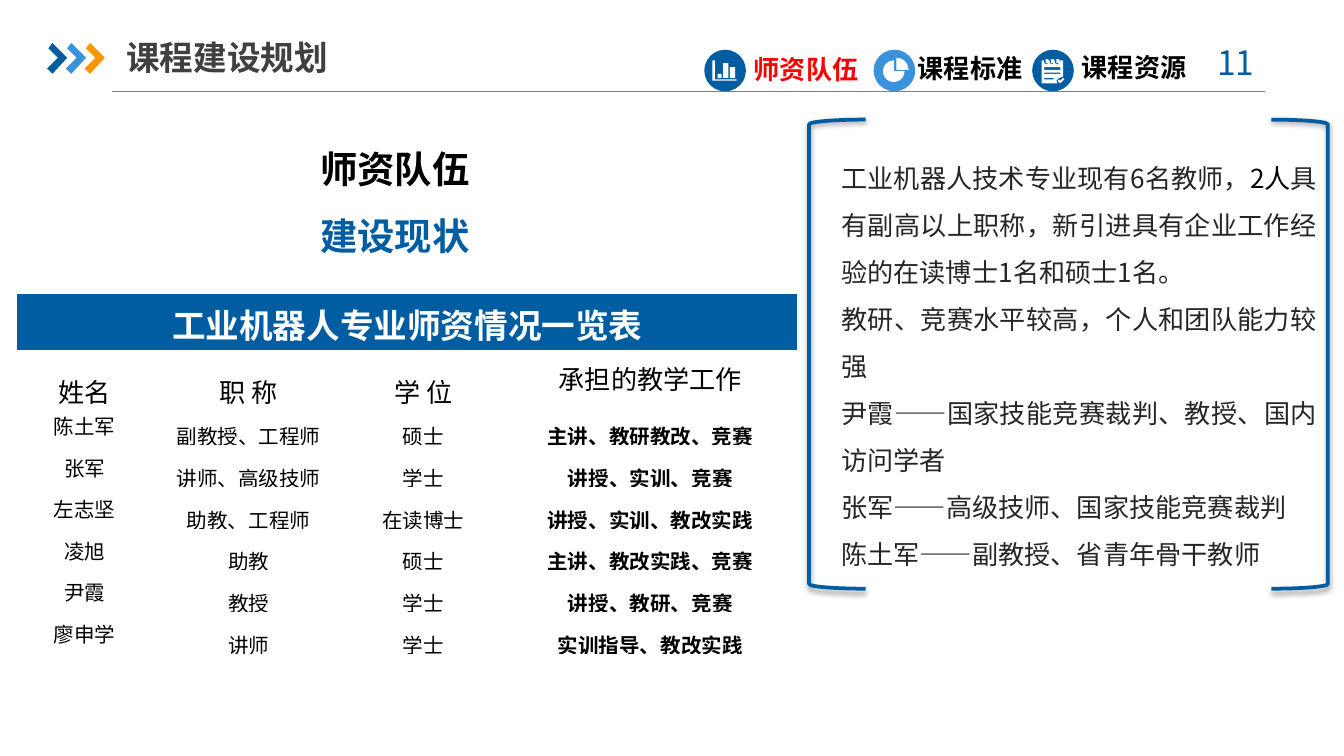
"""Builds the teaching-team slide of a course construction plan."""
from math import cos, radians, sin

from lxml import etree
from pptx import Presentation
from pptx.dml.color import RGBColor
from pptx.enum.shapes import MSO_CONNECTOR, MSO_SHAPE
from pptx.enum.text import MSO_ANCHOR, PP_ALIGN
from pptx.oxml.ns import qn
from pptx.util import Inches, Pt

LEFT, CENTER, JUSTIFY = PP_ALIGN.LEFT, PP_ALIGN.CENTER, PP_ALIGN.JUSTIFY
MIDDLE = MSO_ANCHOR.MIDDLE
STRAIGHT = MSO_CONNECTOR.STRAIGHT
OVAL = MSO_SHAPE.OVAL
LEFT_BRACKET, RIGHT_BRACKET = MSO_SHAPE.LEFT_BRACKET, MSO_SHAPE.RIGHT_BRACKET

BLUE = RGBColor(0x00, 0x5D, 0xA2)
SKY = RGBColor(0x39, 0x92, 0xDB)
ORANGE = RGBColor(0xF7, 0x96, 0x00)
RED = RGBColor(0xFF, 0x00, 0x00)
BLACK = RGBColor(0x00, 0x00, 0x00)
WHITE = RGBColor(0xFF, 0xFF, 0xFF)
GRAY = RGBColor(0x80, 0x80, 0x80)
TITLE_GRAY = RGBColor(0x40, 0x40, 0x40)
INK = RGBColor(0x26, 0x26, 0x26)
SANS = "Noto Sans CJK SC"

TITLE = "课程建设规划"
PAGE_NUMBER = "11 "
HEADINGS = [("师资队伍", BLACK), ("建设现状", BLUE)]
TABS = [
    ("师资队伍", RED, 5.51, 0.35),
    ("课程标准", BLACK, 6.73, 0.34),
    ("课程资源", BLACK, 7.95, 0.33),
]
TABLE_TITLE = "工业机器人专业师资情况一览表"
COLUMN_WIDTHS = [1.02, 1.42, 1.18, 2.2]
ROW_HEIGHTS = [0.43, 0.4] + [0.31] * 7
TEACHERS = [
    ("姓名", "职 称", "学 位", "承担的教学工作"),
    ("陈土军", "副教授、工程师", "硕士", "主讲、教研教改、竞赛"),
    ("张军", "讲师、高级技师", "学士", "讲授、实训、竞赛"),
    ("左志坚", "助教、工程师", "在读博士", "讲授、实训、教改实践"),
    ("凌旭", "助教", "硕士", "主讲、教改实践、竞赛"),
    ("尹霞", "教授", "学士", "讲授、教研、竞赛"),
    ("廖申学", "讲师", "学士", "实训指导、教改实践"),
    ("", "", "", ""),
]
SUMMARY = [
    [("工业机器人技术专业现有6名教师，", INK), ("2人", BLACK),
     ("具有副高以上职称，新引进具有企业工作经验的在读博士1名和硕士1名。", INK)],
    [("教研、竞赛水平较高，个人和团队能力较强", INK)],
    [("尹霞——国家技能竞赛裁判、教授、国内访问学者", INK)],
    [("张军——高级技师、国家技能竞赛裁判", INK)],
    [("陈土军——副教授、省青年骨干教师", INK)],
]


def rectangle(left, top, right, bottom):
    return [(left, top), (right, top), (right, bottom), (left, bottom)]


def sector(x, y, radius, start, end):
    return [(x, y)] + [(x + radius * cos(radians(a)), y + radius * sin(radians(a)))
                       for a in range(start, end + 1, 10)]


CHEVRON = [(0.01, 0.04), (0.04, 0), (0.15, 0.11), (0.04, 0.23), (0, 0.19), (0.08, 0.11)]
CHART_ICON = [
    [(5.3, 0.45), (5.32, 0.45), (5.32, 0.59), (5.48, 0.59), (5.48, 0.6), (5.3, 0.6)],
    rectangle(5.34, 0.55, 5.37, 0.58),
    rectangle(5.38, 0.47, 5.42, 0.58),
    rectangle(5.43, 0.5, 5.47, 0.58),
]
PIE_ICON = [sector(6.67, 0.52, 0.09, -90, 0), sector(6.65, 0.53, 0.08, 0, 270)]
RINGS = [7.79, 7.83, 7.87]
NOTCHES = [point for x in RINGS for point in
           [(x - 0.02, 0.45), (x - 0.02, 0.47), (x, 0.48), (x + 0.01, 0.47), (x + 0.01, 0.45)]]
NOTE_ICON = [
    [(7.75, 0.45)] + NOTCHES + [(7.91, 0.45), (7.91, 0.57), (7.88, 0.58),
                                (7.86, 0.6), (7.87, 0.62), (7.75, 0.62)],
    *[rectangle(x - 0.01, 0.44, x + 0.01, 0.47) for x in RINGS],
    rectangle(7.77, 0.5, 7.89, 0.52),
    rectangle(7.77, 0.54, 7.89, 0.55),
    rectangle(7.77, 0.58, 7.84, 0.59),
    [(7.87, 0.6), (7.88, 0.59), (7.89, 0.6), (7.91, 0.58), (7.92, 0.59), (7.89, 0.62)],
]
ICONS = [(5.24, BLUE, CHART_ICON), (6.5, SKY, PIE_ICON), (7.68, BLUE, NOTE_ICON)]


def format_paragraph(para, size, color, bold=False, align=LEFT, spacing=1.0, font=SANS):
    para.alignment, para.line_spacing = align, spacing
    para.space_before = Pt(0)
    para.font.size, para.font.bold = Pt(size), bold
    para.font.color.rgb = color
    para.font.name = font
    east_asian = etree.SubElement(para._p.find(".//" + qn("a:defRPr")), qn("a:ea"))
    east_asian.set("typeface", SANS)


def set_margins(owner, horizontal, vertical):
    owner.margin_left = owner.margin_right = Inches(horizontal)
    owner.margin_top = owner.margin_bottom = Inches(vertical)


def add_text(slide, place, paragraphs, margins=(0.1, 0.05), wrap=True, **style):
    box = slide.shapes.add_textbox(*map(Inches, place))
    frame = box.text_frame
    frame.word_wrap = wrap
    set_margins(frame, *margins)
    for index, spans in enumerate(paragraphs):
        para = frame.add_paragraph() if index else frame.paragraphs[0]
        for text, color in spans:
            span = para.add_run()
            span.text = text
            if len(spans) > 1:
                span.font.color.rgb = color
        format_paragraph(para, color=spans[0][1], **style)


def paint(shape, color):
    shape.shadow.inherit = False
    shape.fill.solid()
    shape.fill.fore_color.rgb = color
    shape.line.fill.background()


def add_outline(slide, contours, color):
    scaled = [[(Inches(x), Inches(y)) for x, y in contour] for contour in contours]
    builder = slide.shapes.build_freeform(*scaled[0][0], scale=1.0)
    for index, contour in enumerate(scaled):
        if index:
            builder.move_to(*contour[0])
        builder.add_line_segments(contour[1:], close=True)
    paint(builder.convert_to_shape(), color)


def add_bracket(slide, kind, left):
    bracket = slide.shapes.add_shape(kind, Inches(left), Inches(0.89), Inches(0.42), Inches(3.49))
    bracket.fill.background()
    bracket.line.color.rgb, bracket.line.width = BLUE, Pt(2)
    bracket.shadow.inherit = False
    effects = bracket._element.spPr.find(qn("a:effectLst"))
    shadow = etree.SubElement(effects, qn("a:outerShdw"), blurRad=str(Pt(3.1)),
                              dist=str(Pt(1.6)), dir="5400000", rotWithShape="0")
    shade = etree.SubElement(shadow, qn("a:srgbClr"), val="000000")
    etree.SubElement(shade, qn("a:alpha"), val="38000")


def fill_cell(cell, text, fill=WHITE, **style):
    cell.fill.solid()
    cell.fill.fore_color.rgb = fill
    para = cell.text_frame.paragraphs[0]
    para.text = text
    format_paragraph(para, align=CENTER, **style)


def add_teacher_table(slide):
    table = slide.shapes.add_table(len(ROW_HEIGHTS), len(COLUMN_WIDTHS), Inches(0.12), Inches(2.18),
                                   Inches(sum(COLUMN_WIDTHS)), Inches(sum(ROW_HEIGHTS))).table
    for column, width in zip(table.columns, COLUMN_WIDTHS):
        column.width = Inches(width)
    for row, height in zip(table.rows, ROW_HEIGHTS):
        row.height = Inches(height)
    table.cell(0, 0).merge(table.cell(0, 3))
    fill_cell(table.cell(0, 0), TABLE_TITLE, fill=BLUE, size=18, color=WHITE, bold=True, font="Arial")
    for r, texts in enumerate(TEACHERS, 1):
        for c, text in enumerate(texts):
            cell = table.cell(r, c)
            cell.vertical_anchor = MIDDLE
            set_margins(cell, 0.07, 0)
            heading = r == 1
            single = c == 3 if heading else c == 0
            fill_cell(cell, text, size=14 if heading else 11, color=BLACK,
                      bold=c == 3 and not heading, spacing=1.0 if single else 1.55)


def main():
    deck = Presentation()
    deck.slide_width = Inches(10)
    deck.slide_height = deck.slide_width * 9 // 16
    page = deck.slides.add_slide(deck.slide_layouts[5])
    rule = page.shapes.add_connector(STRAIGHT, Inches(0.83), Inches(0.68), Inches(9.41), Inches(0.68))
    rule.line.color.rgb, rule.line.width = GRAY, Pt(0.75)
    etree.SubElement(rule._element.spPr, qn("a:effectLst"))
    for index, color in enumerate([BLUE, SKY, ORANGE]):
        add_outline(page, [[(0.35 + 0.14 * index + x, 0.32 + y) for x, y in CHEVRON]], color)
    add_text(page, (8.86, 0.26, 0.73, 0.4), [[(PAGE_NUMBER, BLUE)]], size=18, align=CENTER)

    title = page.shapes.title
    title.left, title.top, title.width, title.height = map(Inches, (0.94, 0.22, 4.38, 0.41))
    title.text_frame.text = TITLE
    title.text_frame.vertical_anchor = MIDDLE
    set_margins(title.text_frame, 0, 0.05)
    format_paragraph(title.text_frame.paragraphs[0], 18, TITLE_GRAY, bold=True)

    for left, color, contours in ICONS:
        disc = page.shapes.add_shape(OVAL, Inches(left), Inches(0.37), Inches(0.31), Inches(0.31))
        paint(disc, color)
        add_outline(page, contours, WHITE)
    for text, color, left, top in TABS:
        add_text(page, (left, top, 0.99, 0.34), [[(text, color)]], wrap=False,
                 size=14, bold=True, font="Calibri")
    add_teacher_table(page)
    add_text(page, (6.18, 1.05, 3.7, 3.61), SUMMARY, margins=(0.08, 0.04),
             size=14, align=JUSTIFY, spacing=1.5)
    add_bracket(page, LEFT_BRACKET, 6.02)
    add_bracket(page, RIGHT_BRACKET, 9.46)
    add_text(page, (2.16, 0.92, 1.56, 1.01), [[heading] for heading in HEADINGS], margins=(0, 0),
             size=20, bold=True, align=CENTER, spacing=1.5)
    deck.save("out.pptx")


if __name__ == "__main__":
    main()
